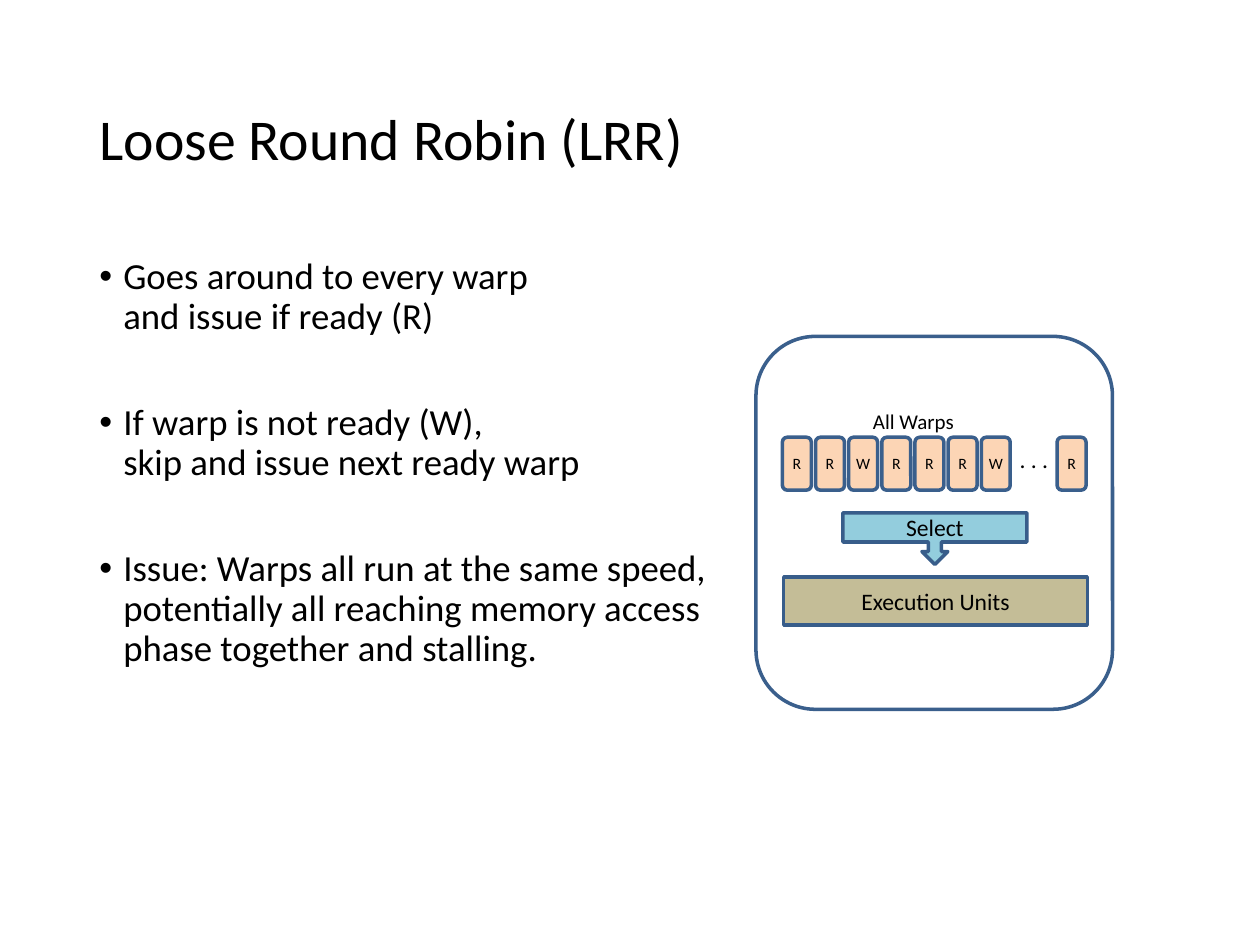
from dataclasses import dataclass
from typing import Optional

import pptx
import pptx.dml.color
import pptx.enum.shapes
import pptx.enum.text
import pptx.oxml
import pptx.oxml.ns
import pptx.util

Inches = pptx.util.Inches
Pt = pptx.util.Pt
Preset = pptx.enum.shapes.MSO_SHAPE
Align = pptx.enum.text.PP_ALIGN
Anchor = pptx.enum.text.MSO_ANCHOR


@dataclass(frozen=True)
class Theme:
    font: str = "Calibri"
    text: str = "000000"
    warp_fill: str = "FCD5B5"
    warp_line: str = "3A5F8C"
    select_fill: str = "93CDDD"
    units_fill: str = "C4BD97"
    block_line: str = "385D8A"
    title_size: float = 33
    body_size: float = 21
    block_size: float = 13.5
    label_size: float = 12
    warp_size: float = 9
    line_width: float = 2


THEME = Theme()


@dataclass(frozen=True)
class Box:
    left: float
    top: float
    width: float
    height: float

    def lengths(self) -> tuple:
        return tuple(Inches(v) for v in (self.left, self.top, self.width, self.height))


@dataclass(frozen=True)
class Block:
    box: Box
    preset: Preset
    line: str
    fill: Optional[str] = None
    text: str = ""
    size: float = THEME.block_size
    inset: Optional[float] = None
    adjustments: tuple = ()


@dataclass(frozen=True)
class Label:
    box: Box
    text: str
    size: float
    align: Align = Align.LEFT
    anchor: Anchor = Anchor.TOP
    wrap: bool = False
    line_spacing: float = 1.0


def rgb(value: str) -> pptx.dml.color.RGBColor:
    return pptx.dml.color.RGBColor.from_string(value)


def add_lines(paragraph, text: str, size: float) -> None:
    """Add one run per line, with line breaks between them."""
    for number, line in enumerate(text.split("\n")):
        if number:
            paragraph.add_line_break()
        run = paragraph.add_run()
        run.text = line
        run.font.name = THEME.font
        run.font.size = Pt(size)
        run.font.color.rgb = rgb(THEME.text)


def draw_block(slide, block: Block) -> None:
    shape = slide.shapes.add_shape(block.preset, *block.box.lengths())
    shape.shadow.inherit = False
    for index, value in enumerate(block.adjustments):
        shape.adjustments[index] = value
    if block.fill:
        shape.fill.solid()
        shape.fill.fore_color.rgb = rgb(block.fill)
    else:
        shape.fill.background()
    shape.line.color.rgb = rgb(block.line)
    shape.line.width = Pt(THEME.line_width)
    if not block.text:
        return
    frame = shape.text_frame
    frame.vertical_anchor = Anchor.MIDDLE
    if block.inset is not None:
        frame.margin_left = frame.margin_right = Inches(block.inset)
        frame.margin_top = frame.margin_bottom = Inches(block.inset)
    frame.paragraphs[0].alignment = Align.CENTER
    add_lines(frame.paragraphs[0], block.text, block.size)


def draw_label(slide, label: Label) -> None:
    frame = slide.shapes.add_textbox(*label.box.lengths()).text_frame
    frame.word_wrap = label.wrap
    frame.vertical_anchor = label.anchor
    paragraph = frame.paragraphs[0]
    paragraph.alignment = label.align
    paragraph.line_spacing = label.line_spacing
    add_lines(paragraph, label.text, label.size)


def set_bullet(paragraph, indent: float) -> None:
    properties = paragraph._p.get_or_add_pPr()
    properties.set("marL", str(Inches(indent)))
    properties.set("indent", str(-Inches(indent)))
    namespace = pptx.oxml.ns.nsdecls("a")
    properties.append(pptx.oxml.parse_xml(f'<a:buFont {namespace} typeface="Arial"/>'))
    properties.append(pptx.oxml.parse_xml(f'<a:buChar {namespace} char="•"/>'))


def draw_bullets(slide, box: Box, bullets: tuple) -> None:
    frame = slide.shapes.add_textbox(*box.lengths()).text_frame
    frame.word_wrap = True
    for number, text in enumerate(bullets):
        paragraph = frame.add_paragraph() if number else frame.paragraphs[0]
        paragraph.line_spacing = 0.9
        paragraph.space_before = Pt(38 if number else 7.5)
        set_bullet(paragraph, 0.19)
        add_lines(paragraph, text, THEME.body_size)


def draw_warp(slide, left: float, state: str) -> None:
    draw_block(slide, Block(Box(left, 3.47, 0.23, 0.42), Preset.ROUNDED_RECTANGLE,
                            THEME.warp_line, THEME.warp_fill, state,
                            THEME.warp_size, inset=0))


TITLE = Label(Box(0.69, 0.4, 8.62, 1.45), "Loose Round Robin (LRR)", THEME.title_size,
              anchor=Anchor.MIDDLE, wrap=True, line_spacing=0.9)
BULLETS = (
    "Goes around to every warp \nand issue if ready (R)",
    "If warp is not ready (W), \nskip and issue next ready warp",
    "Issue: Warps all run at the same speed,\n"
    "potentially all reaching memory access\nphase together and stalling.",
)
PANEL = Block(Box(6, 2.67, 2.83, 2.96), Preset.ROUNDED_RECTANGLE, THEME.warp_line)
SELECT = Block(Box(6.69, 4.07, 1.46, 0.41), Preset.DOWN_ARROW_CALLOUT, THEME.block_line,
               THEME.select_fill, "Select", adjustments=(0.25, 0.25, 0.25, 0.565))
EXECUTION_UNITS = Block(Box(6.22, 4.58, 2.41, 0.38), Preset.RECTANGLE, THEME.block_line,
                        THEME.units_fill, "Execution Units")
WARP_LABEL = Label(Box(6.83, 3.19, 0.86, 0.3), "All Warps", THEME.label_size)
ELLIPSIS = Label(Box(7.99, 3.48, 0.43, 0.33), ". . .", THEME.block_size, Align.CENTER)
FIRST_WARPS = "RRWRRRW"
FIRST_WARP_LEFT, WARP_PITCH, LAST_WARP_LEFT = 6.21, 0.263, 8.39


def main() -> None:
    presentation = pptx.Presentation()
    presentation.slide_width = Inches(10)
    presentation.slide_height = Inches(7.5)
    slide = presentation.slides.add_slide(presentation.slide_layouts[6])

    draw_label(slide, TITLE)
    draw_bullets(slide, Box(0.69, 2, 8.62, 4.76), BULLETS)
    draw_block(slide, PANEL)
    for index, state in enumerate(FIRST_WARPS):
        draw_warp(slide, FIRST_WARP_LEFT + index * WARP_PITCH, state)
    draw_warp(slide, LAST_WARP_LEFT, "R")
    for block in (SELECT, EXECUTION_UNITS):
        draw_block(slide, block)
    for label in (WARP_LABEL, ELLIPSIS):
        draw_label(slide, label)

    presentation.save("out.pptx")


if __name__ == "__main__":
    main()
